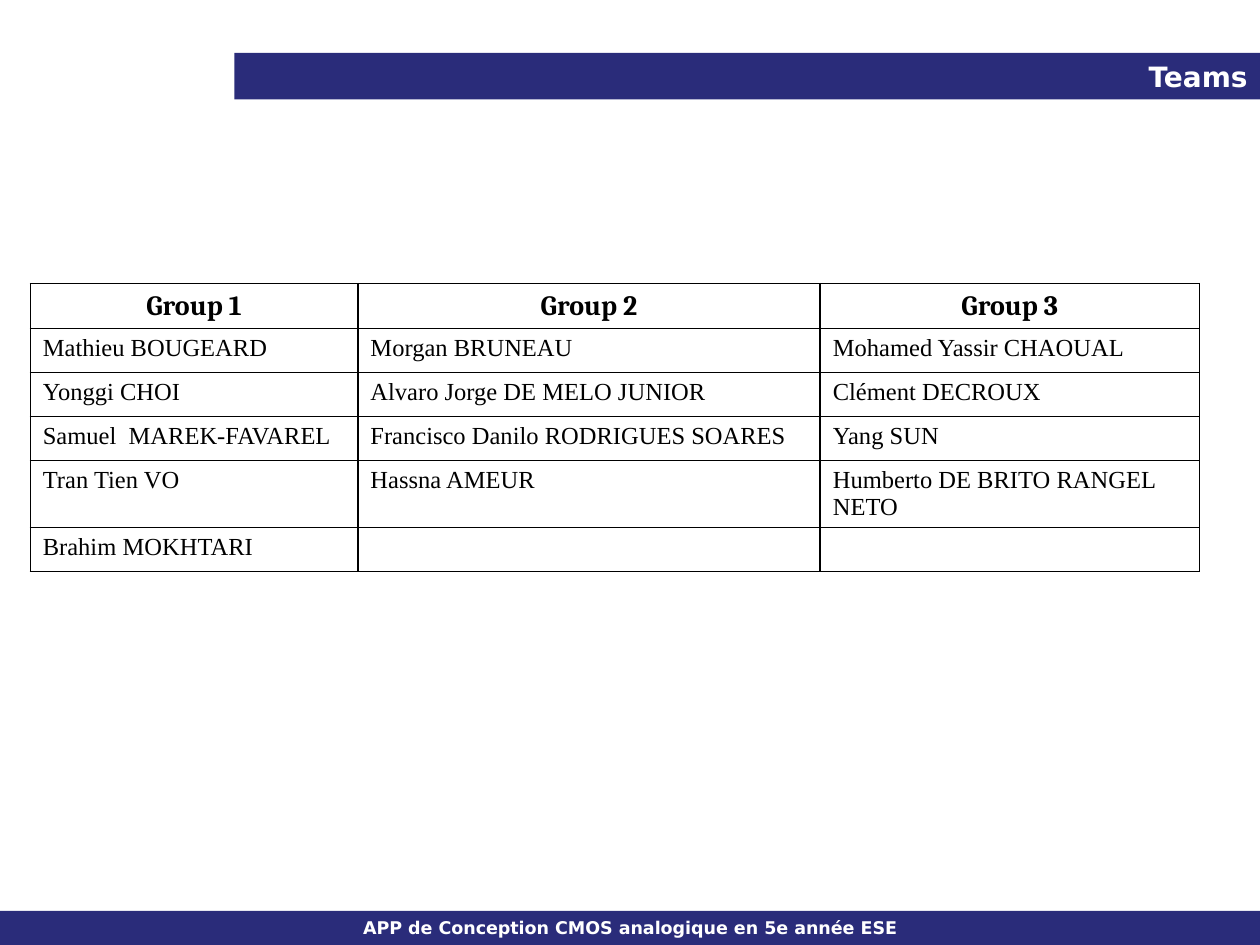
from lxml import etree
from pptx import Presentation
from pptx.dml.color import RGBColor
from pptx.enum.shapes import MSO_SHAPE
from pptx.enum.text import MSO_ANCHOR, PP_ALIGN
from pptx.oxml.ns import qn
from pptx.util import Inches, Pt

RECT = MSO_SHAPE.RECTANGLE
MIDDLE = MSO_ANCHOR.MIDDLE
LEFT, CENTER, RIGHT = PP_ALIGN.LEFT, PP_ALIGN.CENTER, PP_ALIGN.RIGHT

NAVY = RGBColor(0x2A, 0x2C, 0x7A)
WHITE = RGBColor(0xFF, 0xFF, 0xFF)
BLACK = RGBColor(0, 0, 0)

WIDTHS = [2.6, 3.67, 3.01]
ROW = 0.35
TEAMS = [
    ("Group 1", "Group 2", "Group 3"),
    ("Mathieu BOUGEARD", "Morgan BRUNEAU", "Mohamed Yassir CHAOUAL"),
    ("Yonggi CHOI", "Alvaro Jorge DE MELO JUNIOR", "Clément DECROUX"),
    ("Samuel  MAREK-FAVAREL", "Francisco Danilo RODRIGUES SOARES", "Yang SUN"),
    ("Tran Tien VO", "Hassna AMEUR", "Humberto DE BRITO RANGEL NETO"),
    ("Brahim MOKHTARI", "", ""),
]


class Page:
    def __init__(self, slide):
        self.slide = slide
        self.bar_font = "DejaVu Sans"
        self.head_font = "Cambria"
        self.body_font = "Times New Roman"

    def label(self, frame, text, size, font, color, bold, align):
        frame.text = text
        par = frame.paragraphs[0]
        par.alignment = align
        for run in par.runs:
            run.font.size = Pt(size)
            run.font.name = font
            run.font.bold = bold
            run.font.color.rgb = color
        if not text:
            # An empty cell still needs a text size, or its row grows.
            etree.SubElement(par._p, qn("a:endParaRPr"), sz=str(size * 100))

    def bar(self, x, y, w, h, text, size, align):
        shape = self.slide.shapes.add_shape(
            RECT, Inches(x), Inches(y), Inches(w), Inches(h))
        shape.shadow.inherit = False
        shape.fill.solid()
        shape.fill.fore_color.rgb = NAVY
        shape.line.fill.background()
        frame = shape.text_frame
        frame.vertical_anchor = MIDDLE
        self.label(frame, text, size, self.bar_font, WHITE, True, align)

    def border(self, cell):
        """Draw a thin black line on all four sides."""
        props = cell._tc.get_or_add_tcPr()
        for side in ("lnL", "lnR", "lnT", "lnB"):
            line = etree.SubElement(props, qn(f"a:{side}"), w=str(Pt(1)))
            fill = etree.SubElement(line, qn("a:solidFill"))
            etree.SubElement(fill, qn("a:srgbClr"), val=str(BLACK))

    def table(self, x, y, widths, height, rows):
        """Place a grid whose first row is the heading."""
        grid = self.slide.shapes.add_table(
            len(rows), len(widths), Inches(x), Inches(y),
            Inches(sum(widths)), Inches(height * len(rows))).table
        grid.horz_banding = False
        for col, width in zip(grid.columns, widths):
            col.width = Inches(width)
        for r, names in enumerate(rows):
            grid.rows[r].height = Inches(height)
            head = r == 0
            size, font, align = ((16, self.head_font, CENTER) if head
                                 else (14, self.body_font, LEFT))
            for c, name in enumerate(names):
                cell = grid.cell(r, c)
                self.border(cell)
                cell.fill.background()
                self.label(cell.text_frame, name, size, font, BLACK, head, align)


def main():
    deck = Presentation()
    deck.slide_width, deck.slide_height = Inches(10), Inches(7.5)
    page = Page(deck.slides.add_slide(deck.slide_layouts[6]))
    page.bar(0, 7.23, 10, 0.27,
             "APP de Conception CMOS analogique en 5e année ESE", 10, CENTER)
    page.bar(1.86, 0.42, 8.14, 0.37, "Teams", 16, RIGHT)
    page.table(0.24, 2.25, WIDTHS, ROW, TEAMS)
    deck.save("out.pptx")


if __name__ == "__main__":
    main()
